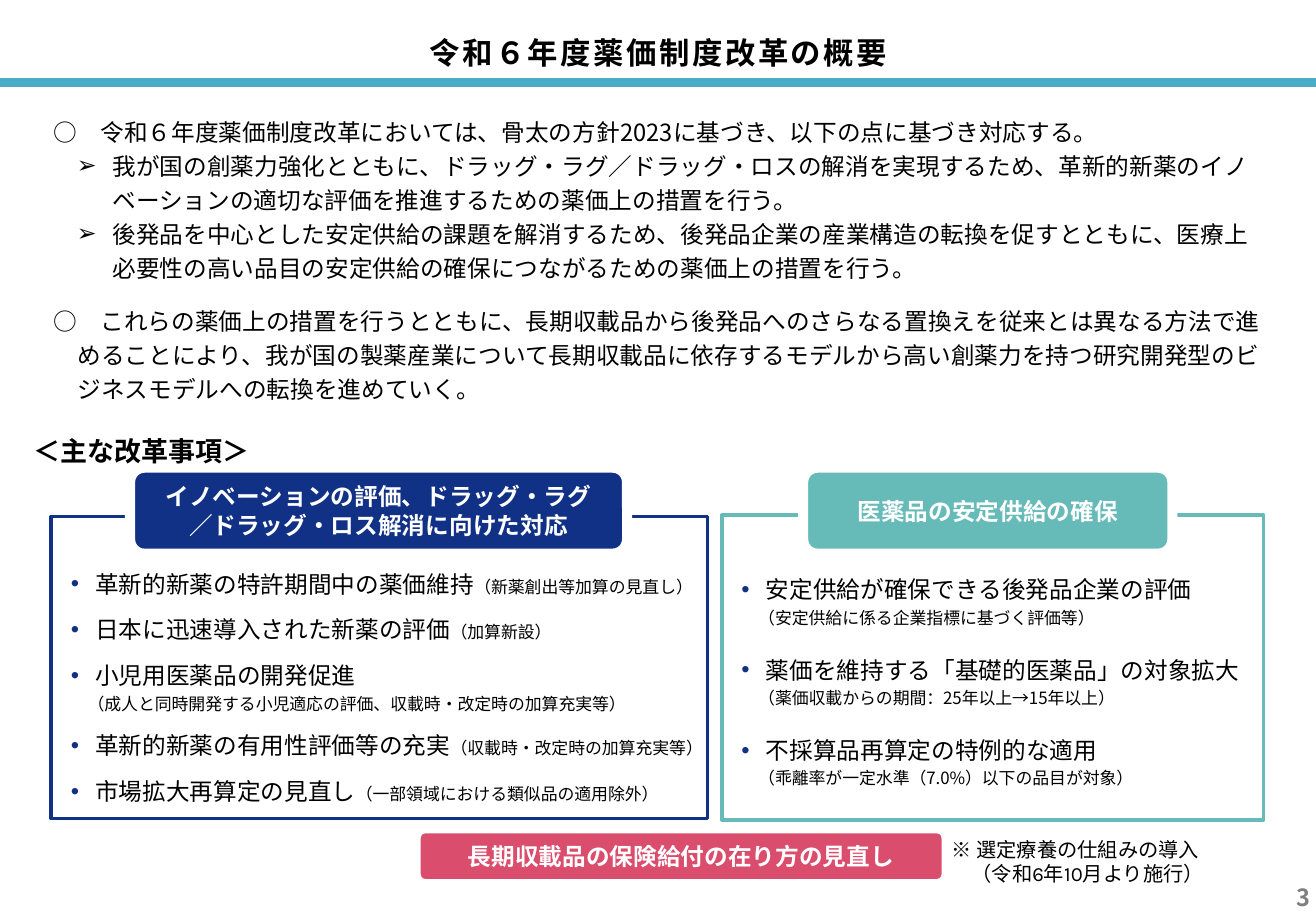
"""Builds a slide that outlines the fiscal 2024 drug pricing reform."""
from dataclasses import dataclass

from lxml.etree import SubElement
from pptx import Presentation
from pptx.dml.color import RGBColor
from pptx.enum.shapes import MSO_CONNECTOR, MSO_SHAPE as Preset
from pptx.enum.text import MSO_ANCHOR as Anchor, MSO_AUTO_SIZE as AutoSize, PP_ALIGN as Align
from pptx.oxml.ns import qn
from pptx.util import Cm, Pt


@dataclass(frozen=True)
class Theme:
    black: str = "000000"
    white: str = "FFFFFF"
    grey: str = "808080"
    navy: str = "103185"
    teal: str = "66BAB7"
    pink: str = "DB4D6D"
    rule: str = "4BACC6"
    sans: str = "Noto Sans CJK JP"
    accent: str = "Karla"
    title: int = 18
    heading: int = 16
    body: int = 14
    remark: int = 12
    note: int = 10
    leading: float = 1.44


theme = Theme()


def write(frame, text, note="", size=theme.body, font=theme.sans, color=theme.black, bold=False,
          align=Align.LEFT, leading=None, before=0, after=0, margin=0, hang=0,
          bullet="", tracking=0):
    """Fill the next paragraph of a frame, with an optional smaller note after the text."""
    paragraph = frame.paragraphs[-1]
    if paragraph.runs:
        paragraph = frame.add_paragraph()
    paragraph.alignment = align
    paragraph.space_before, paragraph.space_after = Pt(before), Pt(after)
    if leading:
        paragraph.line_spacing = Pt(round(size * leading, 2))
    layout = paragraph._p.get_or_add_pPr()
    layout.set("marL", str(Cm(margin)))
    layout.set("indent", str(Cm(-hang)))
    if bullet:
        tint = SubElement(layout, qn("a:buClr"))
        SubElement(tint, qn("a:srgbClr")).set("val", theme.navy if bullet == "•" else color)
        SubElement(layout, qn("a:buFont")).set("typeface", "Arial")
        SubElement(layout, qn("a:buChar")).set("char", bullet)
    else:
        SubElement(layout, qn("a:buNone"))
    for words, points in ((text, size), (note, theme.note)):
        if words:
            run = paragraph.add_run()
            run.text = words
            run.font.size, run.font.bold, run.font.name = Pt(points), bold, font
            run.font.color.rgb = RGBColor.from_string(color)
            SubElement(run._r.rPr, qn("a:ea")).set("typeface", font)
            if tracking:
                run._r.rPr.set("spc", str(round(tracking * 100)))


def place(bounds, insets=(0.25, 0.13, 0.25, 0.13), anchor=Anchor.TOP, preset=None,
          fill=None, line=None, width=0):
    """Add a text box or preset shape and return its text frame."""
    lengths = [Cm(value) for value in bounds]
    if preset is None:
        shape = slide.shapes.add_textbox(*lengths)
    else:
        shape = slide.shapes.add_shape(preset, *lengths)
        shape.shadow.inherit = False
        shape.fill.background()
        if fill:
            shape.fill.solid()
            shape.fill.fore_color.rgb = RGBColor.from_string(fill)
        shape.line.color.rgb = RGBColor.from_string(line)
        shape.line.width = Pt(width)
    frame = shape.text_frame
    frame.word_wrap = True
    frame.vertical_anchor = anchor
    frame.margin_left, frame.margin_top, frame.margin_right, frame.margin_bottom = map(Cm, insets)
    return frame


deck = Presentation()
deck.slide_width, deck.slide_height = Cm(27.51), Cm(19.05)
slide = deck.slides.add_slide(deck.slide_layouts[5])

title = slide.shapes.title
title.left, title.top, title.width, title.height = Cm(0), Cm(0.61), Cm(27.53), Cm(0.86)
heading = title.text_frame
heading.auto_size = AutoSize.NONE
heading.vertical_anchor = Anchor.MIDDLE
heading.margin_left = heading.margin_right = heading.margin_bottom = Cm(0)
heading.margin_top = Cm(0.1)
write(heading, "令和６年度薬価制度改革の概要", size=theme.title, bold=True,
      align=Align.CENTER, tracking=1.5)

title_rule = slide.shapes.add_connector(MSO_CONNECTOR.STRAIGHT, Cm(0), Cm(1.73), Cm(27.51), Cm(1.73))
title_rule.line.color.rgb = RGBColor.from_string(theme.rule)
title_rule.line.width = Pt(5.25)
SubElement(title_rule._element.spPr, qn("a:effectLst"))

policy = place((0.91, 2.21, 25.55, 6.38), (0.2, 0.13, 0.1, 0.13))
main_point = dict(margin=0.51, hang=0.51, leading=theme.leading)
sub_point = dict(margin=1.24, hang=0.74, leading=theme.leading, bullet="➢")
write(policy, "○　令和６年度薬価制度改革においては、骨太の方針2023に基づき、以下の点に基づき対応する。", **main_point)
write(policy, "我が国の創薬力強化とともに、ドラッグ・ラグ／ドラッグ・ロスの解消を実現するため、"
      "革新的新薬のイノベーションの適切な評価を推進するための薬価上の措置を行う。", **sub_point)
write(policy, "後発品を中心とした安定供給の課題を解消するため、後発品企業の産業構造の転換を促すとともに、"
      "医療上必要性の高い品目の安定供給の確保につながるための薬価上の措置を行う。", **sub_point)
write(policy, "○　これらの薬価上の措置を行うとともに、長期収載品から後発品へのさらなる置換えを"
      "従来とは異なる方法で進めることにより、我が国の製薬産業について長期収載品に依存するモデルから"
      "高い創薬力を持つ研究開発型のビジネスモデルへの転換を進めていく。", before=11.6, **main_point)

item = dict(margin=0.51, hang=0.51, leading=theme.leading, bullet="•")
detail = dict(size=theme.note, leading=theme.leading)

innovation = place((1.07, 10.8, 13.72, 6.32), (0.41, 0.99, 0, 0.2),
                   preset=Preset.RECTANGLE, line=theme.navy, width=2)
write(innovation, "革新的新薬の特許期間中の薬価維持", "（新薬創出等加算の見直し）", after=7, **item)
write(innovation, "日本に迅速導入された新薬の評価", "（加算新設）", after=7, **item)
write(innovation, "小児用医薬品の開発促進", **item)
write(innovation, "　（成人と同時開発する小児適応の評価、収載時・改定時の加算充実等）", after=7, **detail)
write(innovation, "革新的新薬の有用性評価等の充実", "（収載時・改定時の加算充実等）", after=7, **item)
write(innovation, "市場拡大再算定の見直し", "（一部領域における類似品の適用除外）", after=7, **item)

supply = place((15.09, 10.77, 11.33, 6.38), (0.41, 1.14, 0, 0.51),
               preset=Preset.RECTANGLE, line=theme.teal, width=2)
for measure, scope in (
    ("安定供給が確保できる後発品企業の評価", "　（安定供給に係る企業指標に基づく評価等）"),
    ("薬価を維持する「基礎的医薬品」の対象拡大", "　（薬価収載からの期間：25年以上→15年以上）"),
    ("不採算品再算定の特例的な適用", "　（乖離率が一定水準（7.0%）以下の品目が対象）"),
):
    write(supply, measure, **item)
    write(supply, scope, after=13, **detail)

for bounds, color, lines in (
    ((2.72, 9.78, 10.39, 1.8), theme.navy,
     ("イノベーションの評価、ドラッグ・ラグ", "／ドラッグ・ロス解消に向けた対応")),
    ((16.79, 9.78, 7.72, 1.8), theme.teal, ("医薬品の安定供給の確保",)),
    ((8.69, 17.32, 11.1, 1.17), theme.pink, ("長期収載品の保険給付の在り方の見直し",)),
):
    banner = place(bounds, anchor=Anchor.MIDDLE, preset=Preset.ROUNDED_RECTANGLE,
                   fill=color, line=theme.white, width=6)
    for words in lines:
        write(banner, words, font=theme.accent, color=theme.white, bold=True, align=Align.CENTER)

reforms = place((0.61, 8.89, 14, 0.99), (0.1, 0.2, 0.1, 0.1), Anchor.MIDDLE)
write(reforms, "＜主な改革事項＞", size=theme.heading, font=theme.accent, bold=True)

remark = place((19.79, 17.4, 6.25, 1.22), (0.1, 0.1, 0.1, 0.1))
for words in ("※ 選定療養の仕組みの導入", "　（令和6年10月より施行）"):
    write(remark, words, size=theme.remark, font=theme.accent)

page_number = place((25.65, 18.14, 1.85, 0.91), (0, 0, 0.1, 0), Anchor.BOTTOM)
write(page_number, "3", color=theme.grey, bold=True, align=Align.RIGHT)

deck.save("out.pptx")
